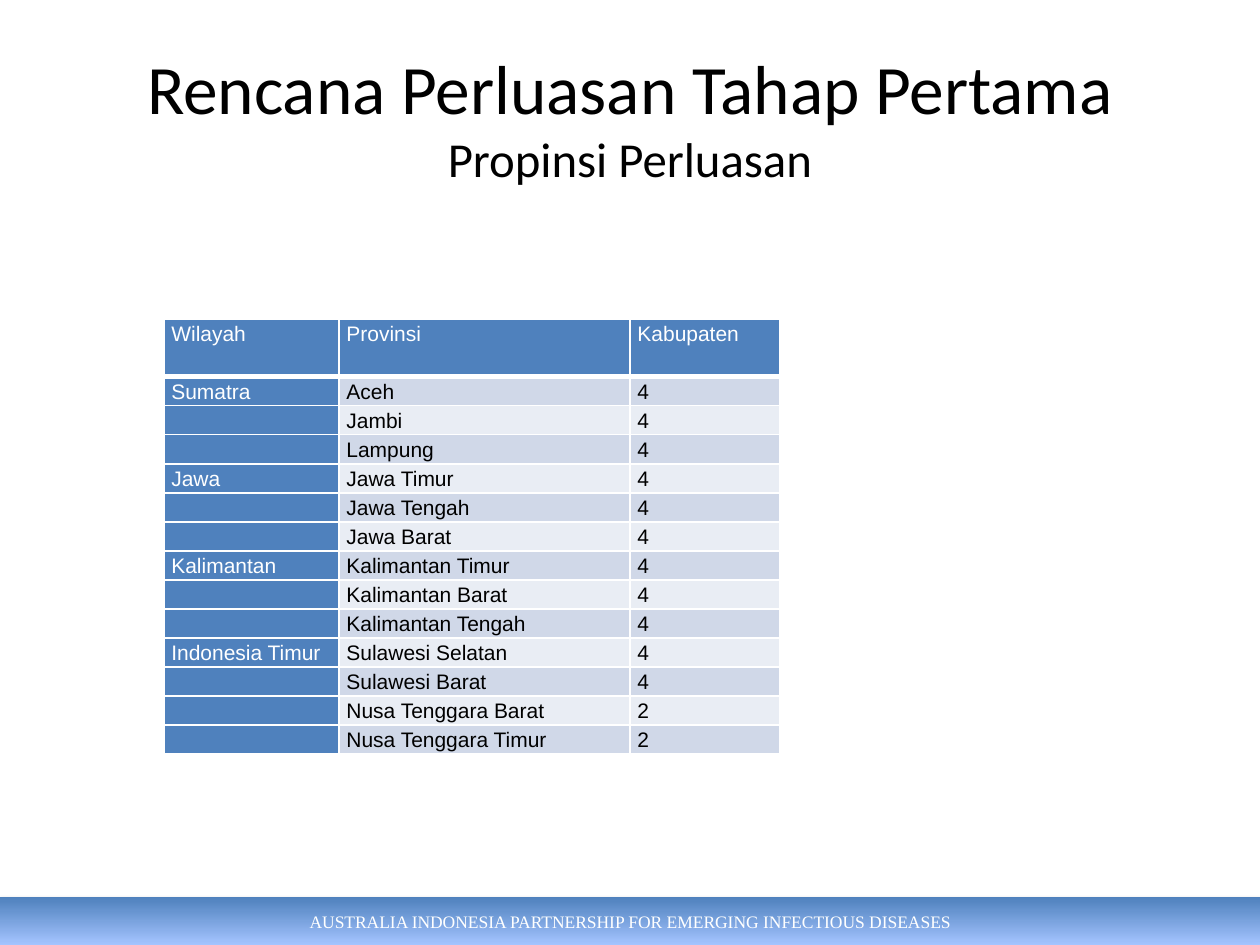
from lxml.etree import SubElement
from pptx import Presentation
from pptx.dml.color import RGBColor
from pptx.enum.shapes import MSO_SHAPE as Shape
from pptx.enum.text import MSO_ANCHOR as Anchor, PP_ALIGN as Align
from pptx.oxml.ns import qn
from pptx.util import Inches, Pt

COLORS = {
    "white": "FFFFFF",
    "black": "000000",
    "blue": "4F81BD",
    "sky": "A4C4FF",
    "dark_band": "D0D8E8",
    "light_band": "E9EDF4",
}

HEADINGS = ("Wilayah", "Provinsi", "Kabupaten")
REGIONS = {
    "Sumatra": [("Aceh", 4), ("Jambi", 4), ("Lampung", 4)],
    "Jawa": [("Jawa Timur", 4), ("Jawa Tengah", 4), ("Jawa Barat", 4)],
    "Kalimantan": [("Kalimantan Timur", 4), ("Kalimantan Barat", 4), ("Kalimantan Tengah", 4)],
    "Indonesia Timur": [
        ("Sulawesi Selatan", 4),
        ("Sulawesi Barat", 4),
        ("Nusa Tenggara Barat", 2),
        ("Nusa Tenggara Timur", 2),
    ],
}


def rgb(name):
    return RGBColor.from_string(COLORS[name])


class PageBuilder:
    title_font = "Calibri"
    table_font = "Arial"
    footer_font = "Times New Roman"
    table_size = 12

    def __init__(self, page):
        self.page = page

    def style(self, font, name, size, color):
        font.name = name
        font.size = Pt(size)
        font.color.rgb = rgb(color)

    def footer(self, text, left, top, width, height):
        bar = self.page.shapes.add_shape(
            Shape.RECTANGLE, Inches(left), Inches(top), Inches(width), Inches(height))
        bar.line.fill.background()
        bar.fill.gradient()
        bar.fill.gradient_angle = 270
        for stop, color in zip(bar.fill.gradient_stops, ("blue", "sky")):
            stop.color.rgb = rgb(color)
        bar.shadow.inherit = False
        effects = bar.element.spPr.find(qn("a:effectLst"))
        shadow = SubElement(effects, qn("a:outerShdw"), blurRad=str(Pt(3.1)),
                            dist=str(Pt(1.8)), dir="5400000", rotWithShape="0")
        tint = SubElement(shadow, qn("a:srgbClr"), val=COLORS["black"])
        SubElement(tint, qn("a:alpha"), val="35000")
        bar.text_frame.vertical_anchor = Anchor.MIDDLE
        para = bar.text_frame.paragraphs[0]
        para.text = text
        para.alignment = Align.CENTER
        self.style(para.font, self.footer_font, 10, "white")

    def title(self, heading, subheading, left, top, width, height):
        box = self.page.shapes.add_textbox(
            Inches(left), Inches(top), Inches(width), Inches(height))
        box.text_frame.word_wrap = True
        box.text_frame.vertical_anchor = Anchor.MIDDLE
        para = box.text_frame.paragraphs[0]
        para.alignment = Align.CENTER
        span = para.add_run()
        span.text = heading
        self.style(span.font, self.title_font, 39.6, "black")
        para.add_line_break()
        span = para.add_run()
        span.text = subheading
        self.style(span.font, self.title_font, 27.9, "black")

    def borders(self, cell, bottom):
        props = cell._tc.get_or_add_tcPr()
        for side, width in (("L", 1), ("R", 1), ("T", 1), ("B", bottom)):
            line = SubElement(props, qn(f"a:ln{side}"), w=str(Pt(width)))
            fill = SubElement(line, qn("a:solidFill"))
            SubElement(fill, qn("a:srgbClr"), val=COLORS["white"])

    def cell(self, cell, text, fill, color, bottom):
        cell.margin_left = cell.margin_right = Inches(0.06)
        cell.margin_top = cell.margin_bottom = 0
        self.borders(cell, bottom)
        cell.fill.solid()
        cell.fill.fore_color.rgb = rgb(fill)
        para = cell.text_frame.paragraphs[0]
        para.line_spacing = 1.15
        self.style(para.font, self.table_font, self.table_size, color)
        if text:
            para.text = text
        else:
            SubElement(para._p, qn("a:endParaRPr"), sz=str(self.table_size * 100))

    def table(self, rows, left, top, widths, heights):
        table = self.page.shapes.add_table(
            len(rows), len(widths), Inches(left), Inches(top),
            Inches(sum(widths)), Inches(sum(heights))).table
        for column, width in zip(table.columns, widths):
            column.width = Inches(width)
        for r, (values, height) in enumerate(zip(rows, heights)):
            table.rows[r].height = Inches(height)
            band = "dark_band" if r % 2 else "light_band"
            for c, value in enumerate(values):
                is_heading = r == 0 or c == 0
                self.cell(table.cell(r, c), value,
                          "blue" if is_heading else band,
                          "white" if is_heading else "black",
                          3 if r == 0 else 1)


def main():
    deck = Presentation()
    deck.slide_width, deck.slide_height = Inches(10), Inches(7.5)
    builder = PageBuilder(deck.slides.add_slide(deck.slide_layouts[6]))
    builder.footer("AUSTRALIA INDONESIA PARTNERSHIP FOR EMERGING INFECTIOUS DISEASES",
                   0, 7.12, 10, 0.38)
    builder.title("Rencana Perluasan Tahap Pertama", "Propinsi Perluasan", 0.5, 0.3, 9, 1.25)
    rows = [HEADINGS]
    for region, provinces in REGIONS.items():
        for i, (province, districts) in enumerate(provinces):
            rows.append(("" if i else region, province, str(districts)))
    builder.table(rows, 1.3, 2.53, (1.39, 2.31, 1.19), [0.46] + [0.23] * (len(rows) - 1))
    deck.save("out.pptx")


if __name__ == "__main__":
    main()
